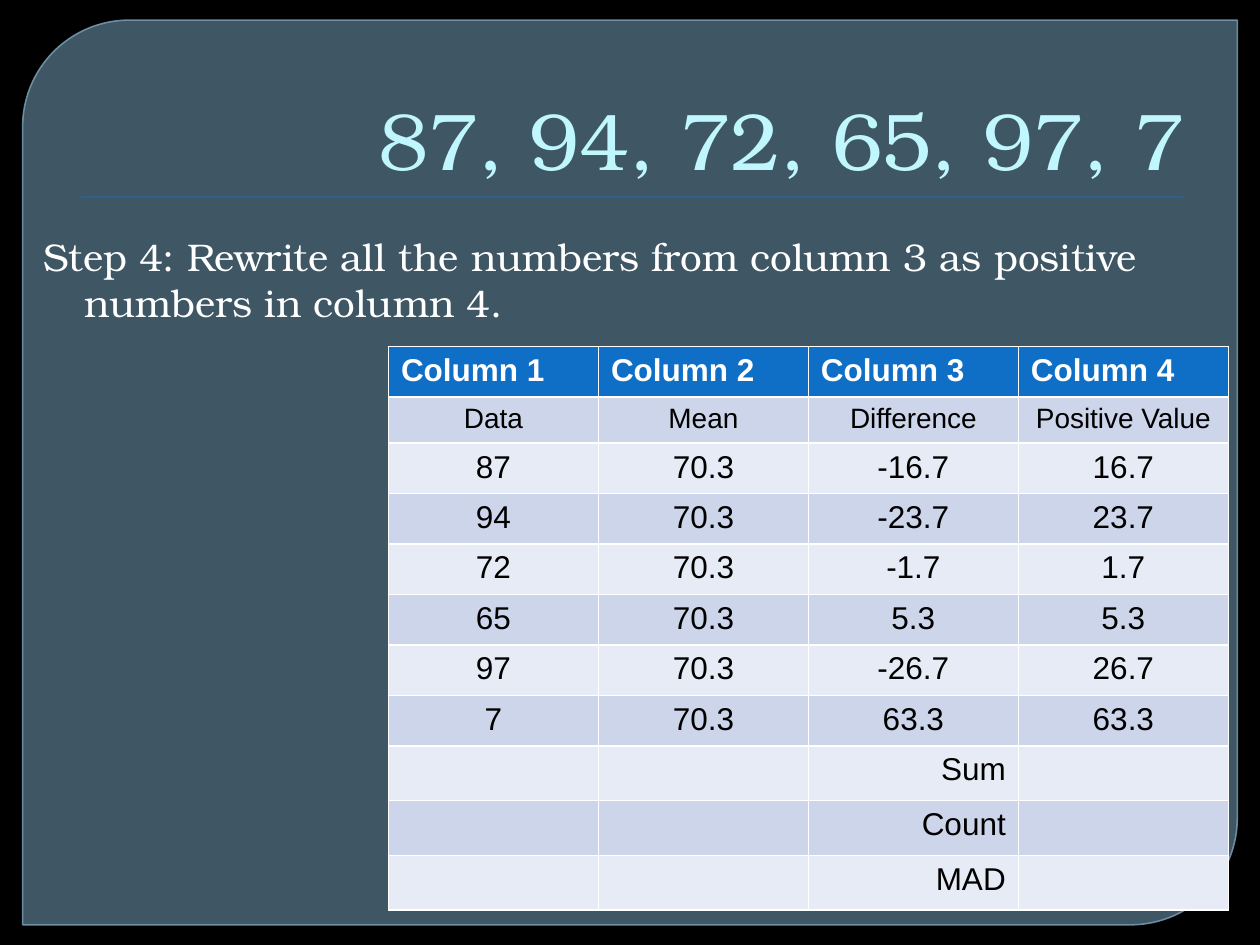
from dataclasses import dataclass

from lxml import etree
from pptx import Presentation, util as u
from pptx.dml.color import RGBColor
from pptx.enum import shapes, text
from pptx.oxml.ns import qn


@dataclass(frozen=True)
class Theme:
    background: str = "000000"
    panel: str = "61869C"
    panel_line: str = "779BB2"
    accent: str = "0F6FC6"
    heading: str = "C0F7FF"
    light: str = "FFFFFF"
    dark: str = "000000"
    bands: tuple = ("CCD5EA", "E7EBF5")
    display_font: str = "TeX Gyre Bonum"
    table_font: str = "Arial"
    title_size: float = 46
    body_size: float = 22
    cell_size: float = 18
    label_size: float = 16


def assign(target, values):
    for name, value in values.items():
        setattr(target, name, value)


def paint(fill, color, opacity=100):
    fill.solid()
    fill.fore_color.rgb = RGBColor.from_string(color)
    if opacity < 100:
        color_element = next(fill._xPr.iter(qn("a:srgbClr")))
        etree.SubElement(color_element, qn("a:alpha"), val=str(opacity * 1000))


class SlideBuilder:
    COLUMNS, ROWS = 40, 30

    def __init__(self, presentation, theme):
        self.theme = theme
        self.cell_width = presentation.slide_width / self.COLUMNS
        self.cell_height = presentation.slide_height / self.ROWS
        self.slide = presentation.slides.add_slide(presentation.slide_layouts[5])
        paint(self.slide.background.fill, theme.background)

    def box(self, column, row, columns, rows):
        return (int(column * self.cell_width), int(row * self.cell_height),
                int(columns * self.cell_width), int(rows * self.cell_height))

    def add_text(self, paragraph, content, alignment, color, **font):
        paragraph.alignment = alignment
        run = paragraph.add_run()
        run.text = content
        assign(run.font, font)
        run.font.color.rgb = RGBColor.from_string(color)

    def panel(self, *place):
        shape = self.slide.shapes.add_shape(
            shapes.MSO_SHAPE.ROUND_2_DIAG_RECTANGLE, *self.box(*place))
        shape.shadow.inherit = False
        shape.adjustments[0] = 0.118
        paint(shape.fill, self.theme.panel, 65)
        paint(shape.line.fill, self.theme.panel_line, 88)
        shape.line.width = u.Pt(0.87)

    def rule(self, *place):
        shape = self.slide.shapes.add_shape(shapes.MSO_SHAPE.RECTANGLE, *self.box(*place))
        shape.shadow.inherit = False
        paint(shape.fill, self.theme.accent)
        shape.line.fill.background()

    def title(self, content, *place):
        shape = self.slide.shapes.title
        shape.element.getparent().append(shape.element)
        assign(shape, dict(zip(("left", "top", "width", "height"), self.box(*place))))
        assign(shape.text_frame, {"vertical_anchor": text.MSO_ANCHOR.BOTTOM,
                                  "auto_size": text.MSO_AUTO_SIZE.NONE})
        self.add_text(shape.text_frame.paragraphs[0], content, text.PP_ALIGN.RIGHT,
                      self.theme.heading, name=self.theme.display_font,
                      size=u.Pt(self.theme.title_size))

    def body(self, content, *place):
        frame = self.slide.shapes.add_textbox(*self.box(*place)).text_frame
        frame.word_wrap = True
        paragraph = frame.paragraphs[0]
        hanging = u.Inches(0.32)
        properties = paragraph._p.get_or_add_pPr()
        properties.set("marL", str(hanging))
        properties.set("indent", str(-hanging))
        self.add_text(paragraph, content, text.PP_ALIGN.LEFT, self.theme.light,
                      name=self.theme.display_font, size=u.Pt(self.theme.body_size))

    def cell_style(self, row, label_row, summary_start):
        theme = self.theme
        if row == 0:
            return theme.accent, text.PP_ALIGN.LEFT, theme.light, theme.cell_size
        size = theme.label_size if row == label_row else theme.cell_size
        alignment = text.PP_ALIGN.RIGHT if row >= summary_start else text.PP_ALIGN.CENTER
        return theme.bands[(row - 1) % 2], alignment, theme.dark, size

    def table(self, records, heights, summary_start, *place):
        table = self.slide.shapes.add_table(
            len(records), len(records[0]), *self.box(*place, sum(heights))).table
        for row, (record, height) in enumerate(zip(records, heights)):
            table.rows[row].height = int(height * self.cell_height)
            fill, alignment, color, size = self.cell_style(row, 1, summary_start)
            for column, content in enumerate(record):
                cell = table.cell(row, column)
                paint(cell.fill, fill)
                if content:
                    self.add_text(cell.text_frame.paragraphs[0], content, alignment, color,
                                  name=self.theme.table_font, size=u.Pt(size), bold=row == 0)


def main():
    presentation = Presentation()
    assign(presentation, {"slide_width": u.Inches(10), "slide_height": u.Inches(7.5)})
    builder = SlideBuilder(presentation, Theme())

    mean = "70.3"
    differences = {"87": ("-16.7", "16.7"), "94": ("-23.7", "23.7"),
                   "72": ("-1.7", "1.7"), "65": ("5.3", "5.3"),
                   "97": ("-26.7", "26.7"), "7": ("63.3", "63.3")}
    headings = [[f"Column {number}" for number in range(1, 5)],
                ["Data", "Mean", "Difference", "Positive Value"]]
    values = [[data, mean, *pair] for data, pair in differences.items()]
    summary = [["", "", label, ""] for label in ("Sum", "Count", "MAD")]
    heights = [1.6, 1.4] + [1.6] * len(values) + [1.74] * len(summary)

    builder.panel(0.72, 0.64, 38.56, 28.72)
    builder.rule(2.56, 6.24, 35, 0.04)
    builder.title(", ".join(differences), 2, 1.12, 36, 5)
    builder.body("Step 4: Rewrite all the numbers from column 3 as positive "
                 "numbers in column 4.", 1, 7.2, 38, 2.8)
    builder.table(headings + values + summary, heights,
                  len(headings) + len(values), 12.33, 11, 26.67)
    presentation.save("out.pptx")


if __name__ == "__main__":
    main()
